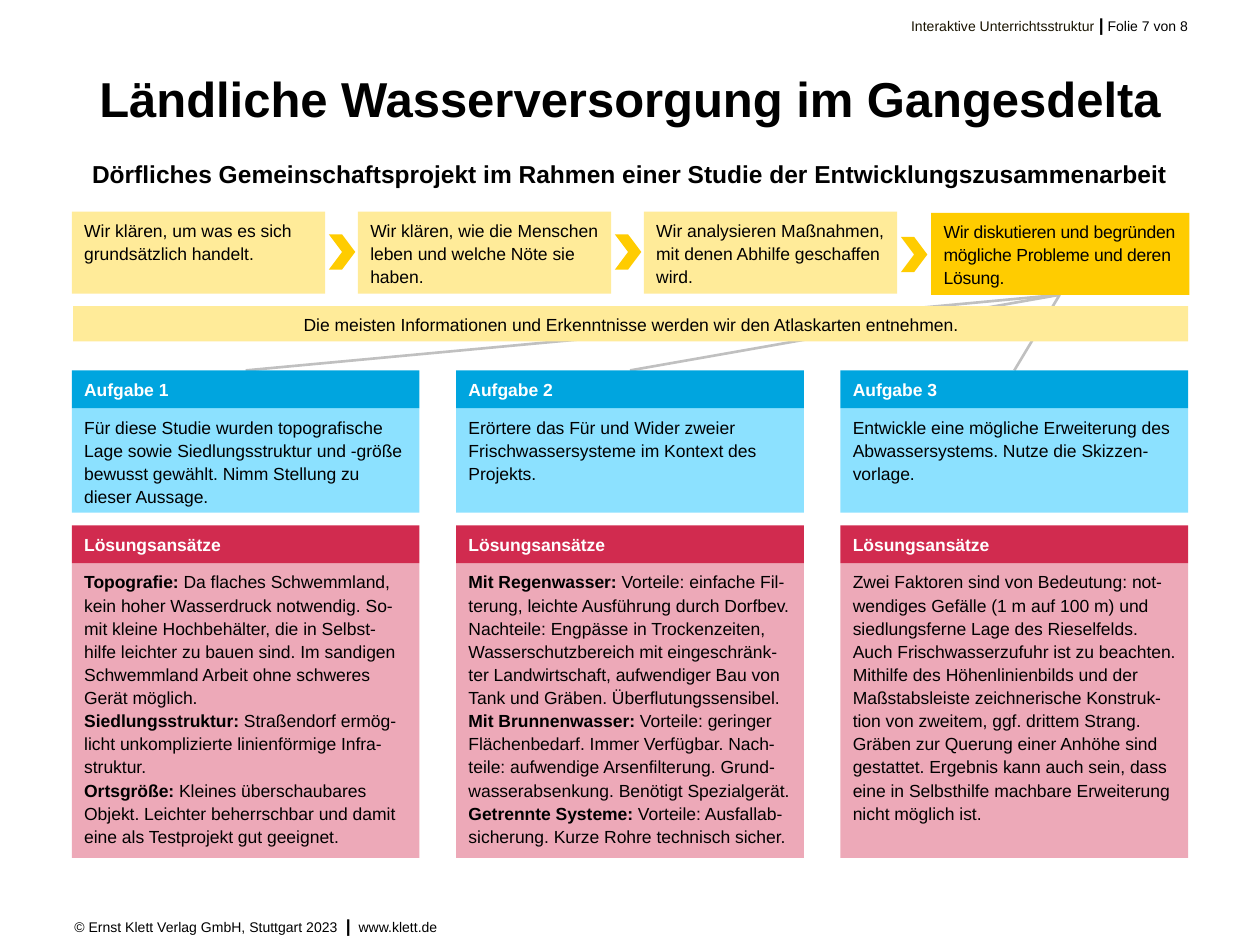
from pptx import Presentation
from pptx.dml.color import RGBColor
from pptx.enum import shapes, text
from pptx.oxml.ns import qn
from pptx.util import Inches, Pt

COLORS = {
    "black": "000000", "white": "FFFFFF", "brown": "191300", "grey": "C0C0C0",
    "pale_yellow": "FFEB99", "yellow": "FFCC00", "blue": "00A5DF",
    "pale_blue": "8CE1FF", "red": "D12B4F", "pink": "EDA9B8",
}
LEFT, CENTER, RIGHT = text.PP_ALIGN.LEFT, text.PP_ALIGN.CENTER, text.PP_ALIGN.RIGHT


def write(shape, paragraphs, align=LEFT, spacing=1.1, margins=(0.1, 0.05)):
    """Fill a shape with paragraphs, each a list of (words, size, color, bold) runs."""
    frame = shape.text_frame
    side, edge = (Inches(margin) for margin in margins)
    settings = {"word_wrap": True, "auto_size": text.MSO_AUTO_SIZE.NONE,
                "vertical_anchor": text.MSO_ANCHOR.TOP,
                "margin_left": side, "margin_right": side,
                "margin_top": edge, "margin_bottom": edge}
    for name, value in settings.items():
        setattr(frame, name, value)
    for index, runs in enumerate(paragraphs):
        paragraph = frame.add_paragraph() if index else frame.paragraphs[0]
        paragraph.alignment, paragraph.line_spacing = align, spacing
        for words, size, color, bold in runs:
            run = paragraph.add_run()
            run.text = words
            for name, value in {"name": "Arial", "size": Pt(size), "bold": bold}.items():
                setattr(run.font, name, value)
            run.font.color.rgb = RGBColor.from_string(COLORS[color])


def add_block(kind, left, top, width, height, fill):
    block = slide.shapes.add_shape(kind, Inches(left), Inches(top), Inches(width), Inches(height))
    block.shadow.inherit = False
    block.fill.solid()
    block.fill.fore_color.rgb = RGBColor.from_string(COLORS[fill])
    block.line.fill.background()
    return block


RECT, CHEVRON = shapes.MSO_SHAPE.RECTANGLE, shapes.MSO_SHAPE.CHEVRON
MARGIN, CONTENT_WIDTH = 0.57, 8.86
COLUMN_WIDTH, COLUMN_PITCH = 2.76, 3.05
STEP_WIDTH, STEP_PITCH, STEP_TOP, STEP_HEIGHT = 2.01, 2.27, 1.68, 0.65
TASK_TOP, SOLUTION_TOP, HEADER_HEIGHT = 2.94, 4.17, 0.3

prs = Presentation()
prs.slide_width, prs.slide_height = Inches(10), Inches(7.5)
slide = prs.slides.add_slide(prs.slide_layouts[5])

# Title, subtitle, page header and footer
title = slide.shapes.title
title.left, title.top = Inches(MARGIN), Inches(0.6)
title.width, title.height = Inches(CONTENT_WIDTH), Inches(0.59)
write(title, [[("Ländliche Wasserversorgung im Gangesdelta", 28, "black", True)]],
      CENTER, 0.9, (0, 0))

captions = [
    (MARGIN, 1.19, CONTENT_WIDTH, 0.39, CENTER, 1.1, (0, 0.05),
     [("Dörfliches Gemeinschaftsprojekt im Rahmen einer Studie der Entwicklungszusammenarbeit",
       14, "black", True)]),
    (3.03, 0.11, 6.4, 0.2, RIGHT, 1, (0, 0),
     [("Interaktive Unterrichtsstruktur ", 8, "brown", False), ("|", 10, "black", True),
      (" Folie 7 von 8", 8, "black", False)]),
    (0.59, 7.26, 7.58, 0.2, LEFT, 1, (0, 0),
     [("© Ernst Klett Verlag GmbH, Stuttgart 2023  ", 8, "black", False),
      ("|", 10, "black", True), ("  www.klett.de", 8, "black", False)]),
]
for left, top, width, height, align, spacing, margins, runs in captions:
    caption = slide.shapes.add_textbox(Inches(left), Inches(top), Inches(width), Inches(height))
    write(caption, [runs], align, spacing, margins)

# Lines from the current step to the tasks, behind the information bar
for column in range(3):
    task_center = MARGIN + column * COLUMN_PITCH + COLUMN_WIDTH / 2
    link = slide.shapes.add_connector(shapes.MSO_CONNECTOR.STRAIGHT, Inches(task_center),
                                      Inches(TASK_TOP), Inches(8.41), Inches(2.34))
    link.line.color.rgb = RGBColor.from_string(COLORS["grey"])
    link.line.width = Pt(1.5)
    properties = link._element.spPr
    properties.append(properties.makeelement(qn("a:effectLst"), {}))

# Steps of the lesson
steps = [
    "Wir klären, um was es sich grundsätzlich handelt.",
    "Wir klären, wie die Menschen leben und welche Nöte sie haben.",
    "Wir analysieren Maßnahmen, mit denen Abhilfe geschaffen wird.",
]
for index, words in enumerate(steps):
    left = MARGIN + index * STEP_PITCH
    step = add_block(RECT, left, STEP_TOP, STEP_WIDTH, STEP_HEIGHT, "pale_yellow")
    write(step, [[(words, 10, "black", False)]])
    chevron_top = 1.88 if index == 2 else 1.86
    add_block(CHEVRON, left + STEP_WIDTH + 0.03, chevron_top, 0.21, 0.28, "yellow")

current_step = add_block(RECT, 7.39, 1.69, 2.05, STEP_HEIGHT, "yellow")
write(current_step, [[("Wir diskutieren und begründen mögliche Probleme und deren Lösung.",
                       10, "black", False)]])
current_step.text_frame.paragraphs[0].runs[0].font._element.set("spc", "-10")

information = add_block(RECT, 0.58, 2.43, 8.85, 0.28, "pale_yellow")
write(information, [[("Die meisten Informationen und Erkenntnisse werden wir den "
                      "Atlaskarten entnehmen.", 10, "black", False)]], CENTER)

# Tasks and solutions; each solution paragraph alternates (words, bold) parts
columns = [
    ("Für diese Studie wurden topografische Lage sowie Siedlungsstruktur und -größe "
     "bewusst gewählt. Nimm Stellung zu dieser Aussage.",
     [[("Topografie:", True),
       (" Da flaches Schwemmland, kein hoher Wasserdruck notwendig. So-mit kleine "
        "Hochbehälter, die in Selbst-hilfe leichter zu bauen sind. Im sandigen "
        "Schwemmland Arbeit ohne schweres Gerät möglich.", False)],
      [("Siedlungsstruktur: ", True),
       ("Straßendorf ermög-licht unkomplizierte linienförmige Infra-struktur.", False)],
      [("Ortsgröße:", True),
       (" Kleines überschaubares Objekt. Leichter beherrschbar und damit eine als "
        "Testprojekt gut geeignet.", False)]]),
    ("Erörtere das Für und Wider zweier Frischwassersysteme im Kontext des Projekts.",
     [[("Mit Regenwasser: ", True),
       ("Vorteile: einfache Fil-terung, leichte Ausführung durch Dorfbev.", False)],
      [("Nachteile: Engpässe in Trockenzeiten, Wasserschutzbereich mit "
        "eingeschränk-ter Landwirtschaft, aufwendiger Bau von Tank und Gräben. "
        "Überflutungssensibel. ", False),
       ("Mit Brunnenwasser: ", True),
       ("Vorteile: geringer Flächenbedarf. Immer Verfügbar. Nach-teile: aufwendige "
        "Arsenfilterung. Grund-wasserabsenkung. Benötigt Spezialgerät.", False)],
      [("Getrennte Systeme: ", True),
       ("Vorteile: Ausfallab-sicherung. Kurze Rohre technisch sicher.", False)]]),
    ("Entwickle eine mögliche Erweiterung des Abwassersystems. Nutze die Skizzen-vorlage.",
     [[("Zwei Faktoren sind von Bedeutung: not-wendiges Gefälle (1 m auf 100 m) und "
        "siedlungsferne Lage des Rieselfelds. Auch Frischwasserzufuhr ist zu beachten. "
        "Mithilfe des Höhenlinienbilds und der Maßstabsleiste zeichnerische "
        "Konstruk-tion von zweitem, ggf. drittem Strang. Gräben zur Querung einer "
        "Anhöhe sind gestattet. Ergebnis kann auch sein, dass eine in Selbsthilfe "
        "machbare Erweiterung nicht möglich ist.", False)]]),
]
for index, (task, solution) in enumerate(columns):
    left = MARGIN + index * COLUMN_PITCH
    panels = [
        (TASK_TOP, 0.83, "blue", "pale_blue", f"Aufgabe {index + 1}", [[(task, False)]]),
        (SOLUTION_TOP, 2.34, "red", "pink", "Lösungsansätze", solution),
    ]
    for top, body_height, header_fill, body_fill, heading, paragraphs in panels:
        body = add_block(RECT, left, top + HEADER_HEIGHT, COLUMN_WIDTH, body_height, body_fill)
        write(body, [[(words, 10, "black", bold) for words, bold in parts]
                     for parts in paragraphs])
        header = add_block(RECT, left, top, COLUMN_WIDTH, HEADER_HEIGHT, header_fill)
        write(header, [[(heading, 10, "white", True)]])

prs.save("out.pptx")
